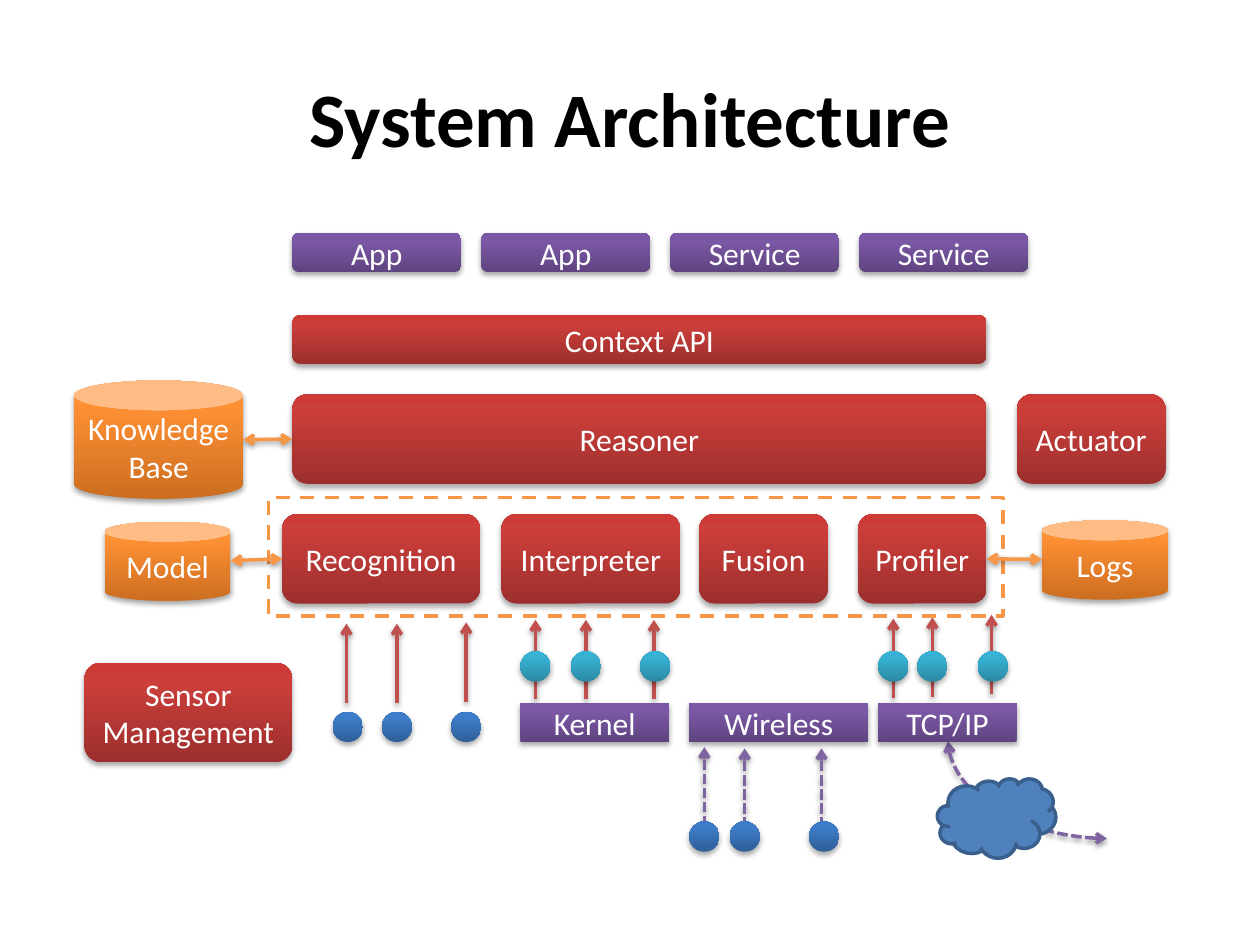
import copy

import pptx
import pptx.dml.color
import pptx.enum.dml
import pptx.enum.shapes
import pptx.enum.text
import pptx.oxml
import pptx.oxml.ns
import pptx.util

RGBColor = pptx.dml.color.RGBColor
Inches = pptx.util.Inches
Pt = pptx.util.Pt
SHAPE = pptx.enum.shapes.MSO_SHAPE
CONNECTOR = pptx.enum.shapes.MSO_CONNECTOR
DASH = pptx.enum.dml.MSO_LINE
qn = pptx.oxml.ns.qn

WHITE = RGBColor(0xFF, 0xFF, 0xFF)
BLACK = RGBColor(0x00, 0x00, 0x00)
RED_LINE = RGBColor(0xC0, 0x50, 0x4D)
PURPLE_LINE = RGBColor(0x80, 0x64, 0xA2)
ORANGE_LINE = RGBColor(0xF7, 0x96, 0x46)
CLOUD_FILL = RGBColor(0x4F, 0x81, 0xBD)
CLOUD_LINE = RGBColor(0x3A, 0x5F, 0x8C)

# Gradients run from bottom to top, with stops at 0, 80 and 100 %
STOPS = (0, 0.8, 1)
RED = (RGBColor(0x9C, 0x2F, 0x2D), RGBColor(0xCB, 0x3E, 0x3A), RGBColor(0xCE, 0x3B, 0x37))
PURPLE = (RGBColor(0x5F, 0x44, 0x80), RGBColor(0x7B, 0x58, 0xA6), RGBColor(0x7C, 0x57, 0xA8))
ORANGE = (RGBColor(0xCC, 0x6E, 0x20), RGBColor(0xFF, 0x90, 0x34), RGBColor(0xFF, 0x91, 0x36))
BLUE = (RGBColor(0x2F, 0x5F, 0x99), RGBColor(0x3D, 0x7C, 0xC7), RGBColor(0x3A, 0x7C, 0xCB))
TEAL = (RGBColor(0x2A, 0x88, 0xA2), RGBColor(0x37, 0xB1, 0xD2), RGBColor(0x34, 0xB4, 0xD6))

DOT = 0.24
ARROW_LENGTH = 0.63


def write_text(shape, text, size=18, color=WHITE, bold=False, font="Calibri"):
    """Fill a shape with centred text, one paragraph per line."""
    frame = shape.text_frame
    frame.word_wrap = True
    frame.vertical_anchor = pptx.enum.text.MSO_ANCHOR.MIDDLE
    frame.text = text
    for para in frame.paragraphs:
        para.alignment = pptx.enum.text.PP_ALIGN.CENTER
        for span in para.runs:
            span.font.name = font
            span.font.size = Pt(size)
            span.font.bold = bold
            span.font.color.rgb = color


def add_shadow(shape, distance, opacity):
    """Give a shape or connector a soft shadow straight below it."""
    properties = shape._element.spPr
    for effects in properties.findall(qn("a:effectLst")):
        properties.remove(effects)
    properties.append(pptx.oxml.parse_xml(
        f'<a:effectLst {pptx.oxml.ns.nsdecls("a")}>'
        f'<a:outerShdw blurRad="{Pt(3.15)}" dist="{Pt(distance)}" dir="5400000" rotWithShape="0">'
        f'<a:srgbClr val="000000"><a:alpha val="{opacity * 1000}"/></a:srgbClr>'
        '</a:outerShdw></a:effectLst>'))


class Diagram:
    """Holds the slide and the common look of its elements."""

    def __init__(self, page):
        self.page = page

    def shape(self, kind, left, top, width, height):
        shape = self.page.shapes.add_shape(
            kind, Inches(left), Inches(top), Inches(width), Inches(height))
        shape.shadow.inherit = False
        return shape

    def title(self, text, left, top, width, height):
        box = self.page.shapes.add_textbox(
            Inches(left), Inches(top), Inches(width), Inches(height))
        write_text(box, text, size=44, color=BLACK, bold=True)

    def block(self, kind, colors, left, top, width, height, text=None):
        block = self.shape(kind, left, top, width, height)
        block.line.fill.background()
        block.fill.gradient()
        block.fill.gradient_angle = 90
        stop_list = block._element.spPr.find(".//" + qn("a:gsLst"))
        stop_list.append(copy.deepcopy(stop_list[-1]))
        for stop, position, color in zip(block.fill.gradient_stops, STOPS, colors):
            stop.position = position
            stop.color.rgb = color
        add_shadow(block, 1.8, 35)
        if text:
            write_text(block, text)
        return block

    def dots(self, colors, top, lefts):
        for left in lefts:
            self.block(SHAPE.OVAL, colors, left, top, DOT, DOT)

    def outline(self, kind, line_color, left, top, width, height, fill=None, dash=None):
        outline = self.shape(kind, left, top, width, height)
        if fill is None:
            outline.fill.background()
        else:
            outline.fill.solid()
            outline.fill.fore_color.rgb = fill
        outline.line.color.rgb = line_color
        outline.line.width = Pt(2)
        outline.line.dash_style = dash

    def arrow(self, color, start, end, kind=CONNECTOR.STRAIGHT, dash=None, both=False):
        arrow = self.page.shapes.add_connector(kind, *map(Inches, start + end))
        arrow.line.color.rgb = color
        arrow.line.width = Pt(2)
        arrow.line.dash_style = dash
        line = arrow._element.spPr.find(qn("a:ln"))
        for tag in ("a:headEnd", "a:tailEnd") if both else ("a:tailEnd",):
            line.append(line.makeelement(qn(tag), {"type": "arrow"}))
        add_shadow(arrow, 1.6, 38)
        return arrow

    def curved_arrow(self, color, left, top, width, height):
        """A double-headed quarter curve, turned by 270 degrees and mirrored."""
        arrow = self.arrow(color, (left, top), (left + width, top + height),
                           kind=CONNECTOR.CURVE, dash=DASH.SQUARE_DOT, both=True)
        properties = arrow._element.spPr
        properties.find(qn("a:prstGeom")).set("prst", "curvedConnector2")
        frame = properties.find(qn("a:xfrm"))
        frame.set("rot", "16200000")
        frame.set("flipH", "1")


def main():
    deck = pptx.Presentation()
    deck.slide_width, deck.slide_height = Inches(10), Inches(7.5)
    diagram = Diagram(deck.slides.add_slide(deck.slide_layouts[6]))

    # Arrows from the network, lying behind the dots
    for x, y in ((5.59, 6.56), (5.91, 6.57), (6.52, 6.57)):
        diagram.arrow(PURPLE_LINE, (x, y), (x, y - ARROW_LENGTH), dash=DASH.SQUARE_DOT)
    diagram.curved_arrow(PURPLE_LINE, 7.77, 5.64, 0.77, 1.26)

    # Arrows from the sensors
    for x, y in ((2.75, 5.58), (3.15, 5.58), (3.7, 5.57),
                 (4.25, 5.55), (4.65, 5.55), (5.19, 5.55),
                 (7.09, 5.54), (7.4, 5.53), (7.87, 5.51)):
        diagram.arrow(RED_LINE, (x, y), (x, y - ARROW_LENGTH))

    diagram.outline(SHAPE.CLOUD, CLOUD_LINE, 7.44, 6.18, 0.94, 0.63, fill=CLOUD_FILL)
    diagram.title("System Architecture", 0.5, 0.3, 9, 1.25)

    # Sources and sensor dots
    for text, left, width in (("Wireless", 5.47, 1.42), ("Kernel", 4.13, 1.18),
                              ("TCP/IP", 6.97, 1.1)):
        diagram.block(SHAPE.RECTANGLE, PURPLE, left, 5.58, width, 0.31, text)
    diagram.dots(BLUE, 5.65, (2.64, 3.03, 3.58))
    diagram.dots(BLUE, 6.52, (5.47, 5.79, 6.42))
    diagram.dots(TEAL, 5.17, (4.13, 4.53, 5.08, 6.97, 7.28, 7.76))

    # Middleware modules
    modules = {
        text: diagram.block(SHAPE.ROUNDED_RECTANGLE, RED, left, top, width, height, text)
        for text, left, top, width, height in (
            ("Fusion", 5.55, 4.08, 1.02, 0.71),
            ("Recognition", 2.24, 4.08, 1.57, 0.71),
            ("Interpreter", 3.98, 4.08, 1.42, 0.71),
            ("Profiler", 6.81, 4.08, 1.02, 0.71),
            ("Sensor Management", 0.67, 5.26, 1.65, 0.79),
            ("Reasoner", 2.32, 3.13, 5.51, 0.71),
            ("Actuator", 8.07, 3.13, 1.18, 0.71),
            ("Context API", 2.32, 2.5, 5.51, 0.39),
        )}

    # Data stores
    for text, left, top, width, height in (
            ("Logs", 8.27, 4.13, 1, 0.63),
            ("Model", 0.83, 4.14, 1, 0.63),
            ("Knowledge\nBase", 0.59, 3.02, 1.34, 0.94)):
        diagram.block(SHAPE.CAN, ORANGE, left, top, width, height, text)

    # Applications and services
    for column, text in enumerate(("App", "App", "Service", "Service")):
        diagram.block(SHAPE.ROUNDED_RECTANGLE, PURPLE,
                      2.32 + 1.5 * column, 1.85, 1.34, 0.31, text)

    # Module group and its links to the data stores
    diagram.outline(SHAPE.RECTANGLE, ORANGE_LINE, 2.13, 3.95, 5.83, 0.94, dash=DASH.DASH)
    link = diagram.arrow(ORANGE_LINE, (7.83, 4.44), (8.27, 4.44), both=True)
    link.begin_connect(modules["Profiler"], 3)
    for text, start, end in (("Recognition", (1.83, 4.45), (2.24, 4.44)),
                             ("Reasoner", (1.93, 3.49), (2.32, 3.49))):
        link = diagram.arrow(ORANGE_LINE, start, end, both=True)
        link.end_connect(modules[text], 1)

    deck.save("out.pptx")


if __name__ == "__main__":
    main()
